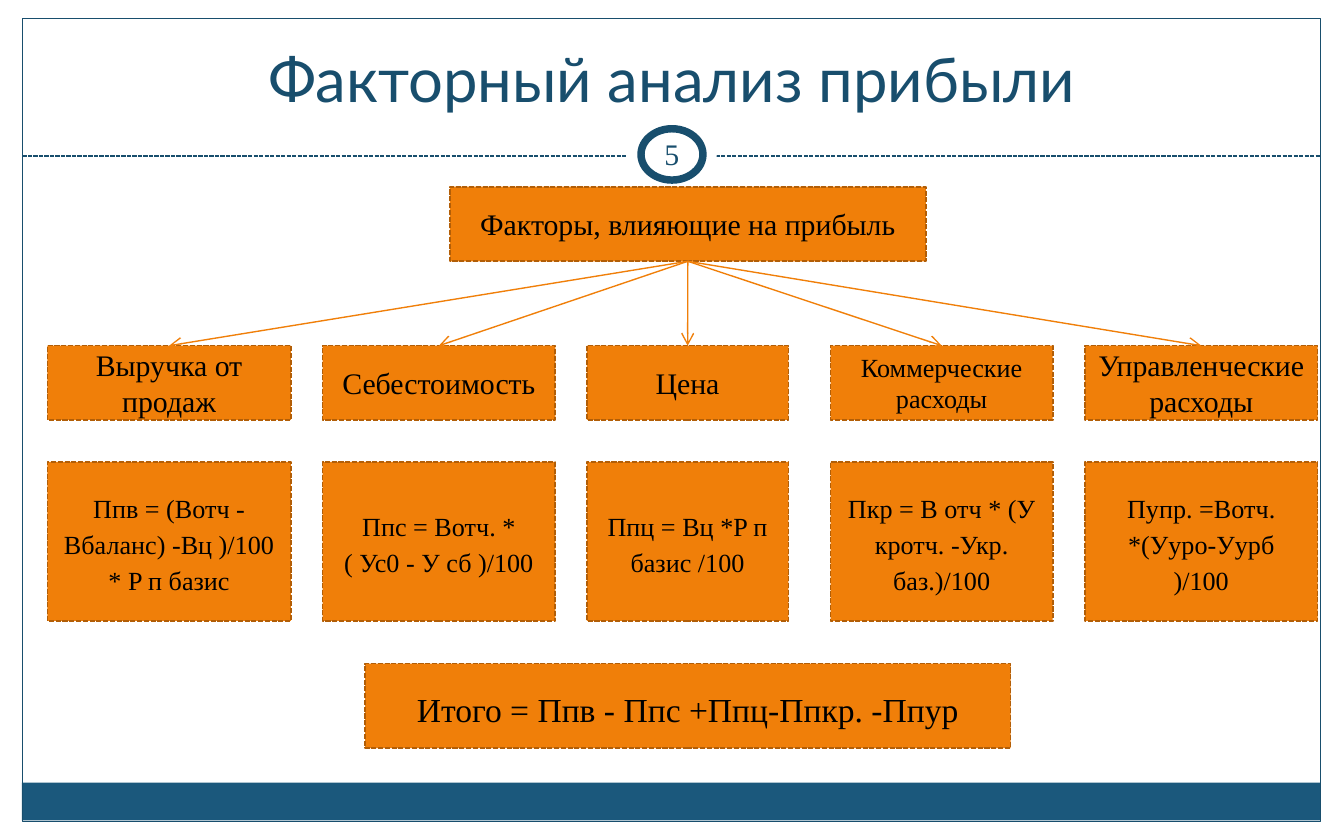
from dataclasses import dataclass

from lxml import etree
from pptx import Presentation
from pptx.dml.color import RGBColor
from pptx.enum.dml import MSO_LINE
from pptx.enum.shapes import MSO_CONNECTOR, MSO_SHAPE
from pptx.enum.text import MSO_ANCHOR, MSO_AUTO_SIZE, PP_ALIGN
from pptx.oxml.ns import qn
from pptx.util import Pt

RECTANGLE, OVAL = MSO_SHAPE.RECTANGLE, MSO_SHAPE.OVAL
STRAIGHT = MSO_CONNECTOR.STRAIGHT
DASH = MSO_LINE.SQUARE_DOT
CENTER = PP_ALIGN.CENTER
MIDDLE, BOTTOM = MSO_ANCHOR.MIDDLE, MSO_ANCHOR.BOTTOM
TOP_SIDE, BOTTOM_SIDE = 0, 2
TITLE_ONLY = 5


@dataclass(frozen=True)
class Theme:
    navy: str = "184E6D"
    band: str = "1B587C"
    orange: str = "F07F09"
    brown: str = "B25E07"
    white: str = "FFFFFF"
    black: str = "000000"
    title_font: str = "Lato"
    body_font: str = "Times New Roman"
    title_size: float = 33
    total_size: float = 18
    label_size: float = 16
    small_size: float = 14


THEME = Theme()


def write_text(shape, text, size=THEME.label_size, font=THEME.body_font,
               color=THEME.black, anchor=MIDDLE, spacing=None, margin=None):
    frame = shape.text_frame
    frame.word_wrap = True
    frame.auto_size = MSO_AUTO_SIZE.NONE
    frame.vertical_anchor = anchor
    if margin is not None:
        frame.margin_left = frame.margin_right = Pt(margin)
        frame.margin_top = frame.margin_bottom = Pt(margin)
    paragraph = frame.paragraphs[0]
    paragraph.alignment = CENTER
    if spacing:
        paragraph.line_spacing = spacing
    run = paragraph.add_run()
    run.text = text
    run.font.name = font
    run.font.size = Pt(size)
    run.font.color.rgb = RGBColor.from_string(color)


class SlideBuilder:
    def __init__(self, slide, theme):
        self.slide = slide
        self.theme = theme

    def title(self, text, *bounds):
        title = self.slide.shapes.title
        title.left, title.top, title.width, title.height = map(Pt, bounds)
        write_text(title, text, size=self.theme.title_size, font=self.theme.title_font,
                   color=self.theme.navy, anchor=BOTTOM)

    def style_line(self, line, color, width, dash=None):
        line.color.rgb = RGBColor.from_string(color)
        line.width = Pt(width)
        if dash is not None:
            line.dash_style = dash

    def shape(self, kind, *bounds, fill=None, line=None, width=0.75, dash=None):
        shape = self.slide.shapes.add_shape(kind, *map(Pt, bounds))
        shape.shadow.inherit = False
        if fill:
            shape.fill.solid()
            shape.fill.fore_color.rgb = RGBColor.from_string(fill)
        else:
            shape.fill.background()
        if line:
            self.style_line(shape.line, line, width, dash)
        else:
            shape.line.fill.background()
        return shape

    def box(self, text, *bounds, **text_format):
        box = self.shape(RECTANGLE, *bounds, fill=self.theme.orange,
                         line=self.theme.brown, width=0.9, dash=DASH)
        write_text(box, text, **text_format)
        return box

    def line(self, *points, color, dash=None):
        connector = self.slide.shapes.add_connector(STRAIGHT, *map(Pt, points))
        self.style_line(connector.line, color, 0.75, dash)
        etree.SubElement(connector._element.spPr, qn("a:effectLst"))
        return connector

    def arrow(self, start, end):
        connector = self.line(0, 0, 0, 0, color=self.theme.orange)
        connector.begin_connect(start, BOTTOM_SIDE)
        connector.end_connect(end, TOP_SIDE)
        outline = connector.line._get_or_add_ln()
        etree.SubElement(outline, qn("a:tailEnd"), type="arrow")

    def text(self, text, *bounds, **text_format):
        write_text(self.slide.shapes.add_textbox(*map(Pt, bounds)), text, **text_format)


# left, width, factor, factor type size, formula
FACTORS = [
    (25.4, 130.5, "Выручка от продаж", THEME.label_size,
     "Ппв = (Вотч - Вбаланс) -Вц )/100 * P п базис"),
    (172.8, 124.7, "Себестоимость", THEME.label_size,
     "Ппс = Вотч. * ( Ус0 - У сб )/100"),
    (314.4, 108, "Цена", THEME.label_size,
     "Ппц = Вц *P п базис /100"),
    (445, 119, "Коммерческие расходы", THEME.small_size,
     "Пкр = В отч * (У кротч. -Укр. баз.)/100"),
    (581.2, 124.7, "Управленческие расходы", THEME.label_size,
     "Пупр. =Вотч. *(Ууро-Уурб )/100"),
]


def main():
    presentation = Presentation()
    presentation.slide_width, presentation.slide_height = Pt(720), Pt(450)
    slide = presentation.slides.add_slide(presentation.slide_layouts[TITLE_ONLY])
    builder = SlideBuilder(slide, THEME)

    # Frame, bottom band and divider with the number badge
    builder.shape(RECTANGLE, 11.8, 419.3, 695.8, 20.3, fill=THEME.band)
    builder.shape(RECTANGLE, 12, 10, 695.5, 430, line=THEME.navy)
    builder.line(12, 83.5, 707.5, 83.5, color=THEME.navy, dash=DASH)
    builder.shape(OVAL, 336, 62.7, 48, 40.5, fill=THEME.white)
    builder.shape(OVAL, 343.4, 69, 33.2, 27.5, fill=THEME.white, line=THEME.navy, width=4)

    builder.title("Факторный анализ прибыли", 24, 15, 672, 50)

    # Root box, factors and their formulas
    root = builder.box("Факторы, влияющие на прибыль", 241, 100, 255, 40)
    factor_boxes = [builder.box(factor, left, 185.2, width, 39.8, size=size)
                    for left, width, factor, size, formula in FACTORS]
    for factor_box in factor_boxes:
        builder.arrow(root, factor_box)
    for left, width, factor, size, formula in FACTORS:
        builder.box(formula, left, 247.5, width, 85.2,
                    size=THEME.small_size, spacing=1.15)

    # Total and slide number
    builder.box("Итого = Ппв - Ппс +Ппц-Ппкр. -Ппур", 195.6, 355.5, 345.8, 45.3,
                size=THEME.total_size, spacing=1.15)
    builder.text("5", 342, 68, 36, 29, color=THEME.navy, margin=3.6)

    presentation.save("out.pptx")


if __name__ == "__main__":
    main()
